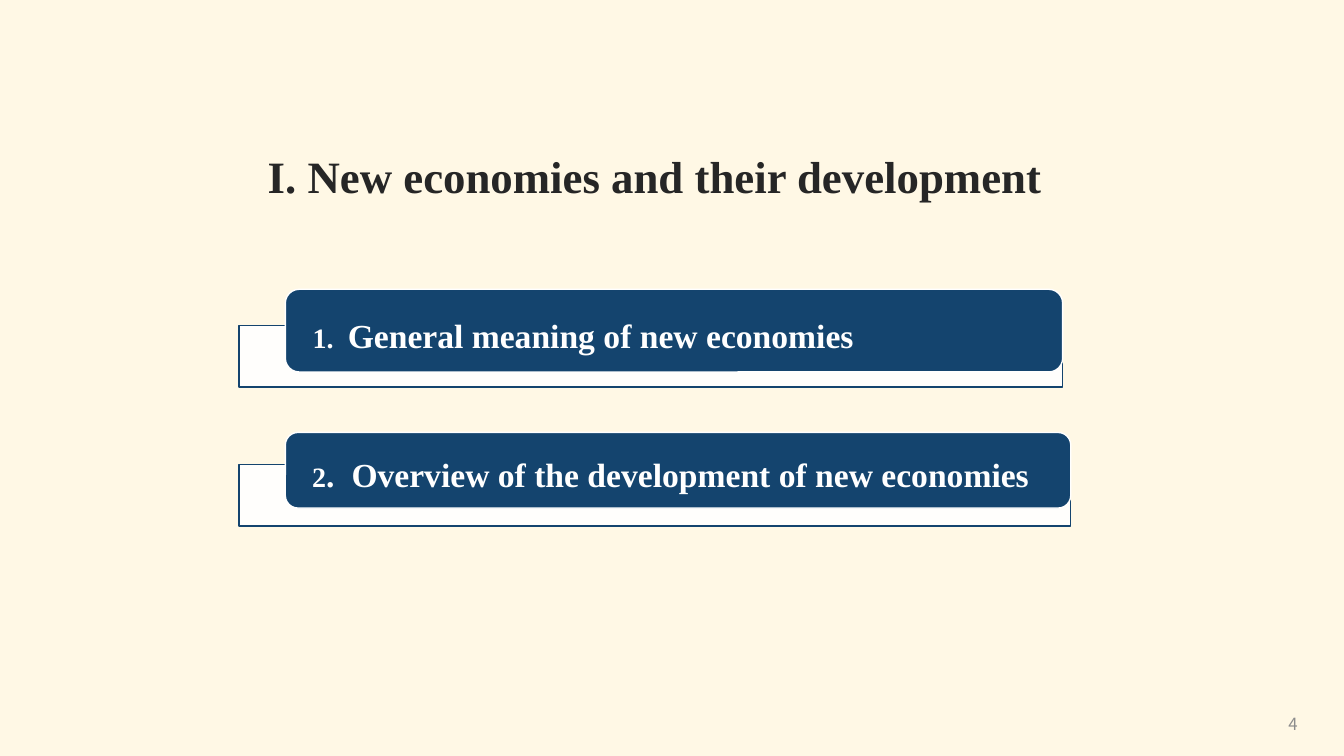
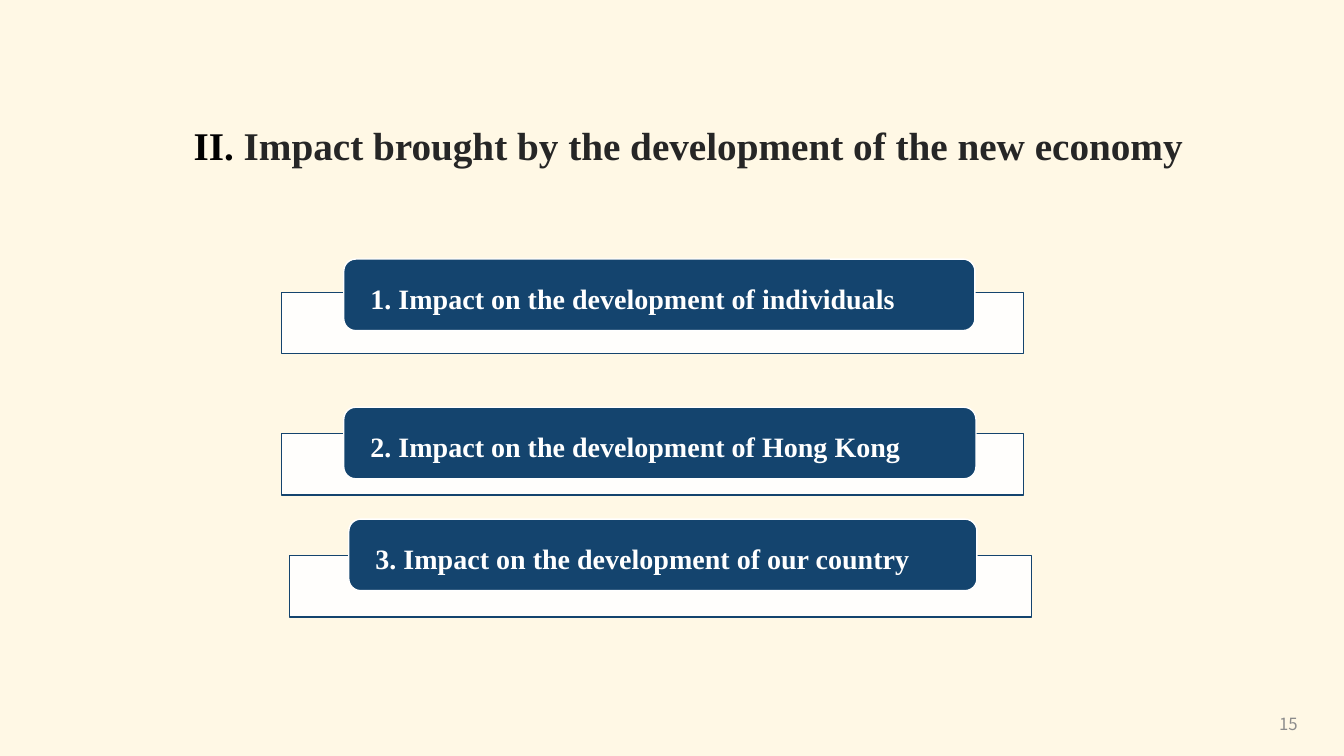
from dataclasses import dataclass

from lxml.etree import SubElement
from pptx import Presentation
from pptx.dml.color import RGBColor
from pptx.enum.shapes import MSO_SHAPE
from pptx.enum.text import MSO_ANCHOR, MSO_AUTO_SIZE, PP_ALIGN
from pptx.oxml.ns import qn
from pptx.util import Inches, Pt


@dataclass(frozen=True)
class Theme:
    cream: str = "FFF8E5"
    navy: str = "14446E"
    white: str = "FFFFFF"
    ink: str = "262626"
    black: str = "000000"
    gray: str = "8C8C8C"
    serif: str = "Times New Roman"
    sans: str = "Noto Sans CJK SC"
    opening_title: int = 32
    title: int = 28
    lead: int = 24
    item: int = 20
    number: int = 12
    outline: int = 1


THEME = Theme()
TRAY_HEIGHT = 0.61
PAGE_NUMBER_AREA = (9.97, 6.98, 3, 0.4)

SECTIONS = [
    {
        "page": "4",
        "title": [("I. New economies and their development", THEME.opening_title, THEME.ink)],
        "title_area": (2.34, 1.42, 8.31, 0.71),
        "topics": [
            {"runs": [("1.\t", THEME.item), ("General meaning of new economies", THEME.lead)],
             "hang": 0.35, "tray": (2.37, 3.23, 8.17), "label": (2.83, 2.87, 7.71, 0.82)},
            {"runs": [("2", THEME.item),
                      (".\tOverview of the development of new economies", THEME.lead)],
             "hang": 0.39, "tray": (2.37, 4.61, 8.25), "label": (2.83, 4.29, 7.79, 0.75)},
        ],
    },
    {
        "page": "15",
        "title": [("II. ", THEME.title, THEME.black),
                  ("Impact brought by the development of the new economy", THEME.title, THEME.ink)],
        "title_area": (1.68, 1.11, 10.29, 0.71),
        "topics": [
            {"runs": [("1. Impact on the development of individuals", THEME.item)],
             "tray": (2.79, 2.9, 7.36), "label": (3.41, 2.57, 6.26, 0.71)},
            {"runs": [("2. Impact on the development of Hong Kong", THEME.item)],
             "tray": (2.79, 4.3, 7.36), "label": (3.41, 4.04, 6.27, 0.71)},
            {"runs": [("3. Impact on the development of our country", THEME.item)],
             "tray": (2.87, 5.51, 7.36), "label": (3.46, 5.15, 6.23, 0.71)},
        ],
    },
]

FRAME_FORMAT = {"word_wrap": True, "auto_size": MSO_AUTO_SIZE.NONE,
                "vertical_anchor": MSO_ANCHOR.MIDDLE}
LABEL_INSETS = {"margin_left": Inches(0.23), "margin_right": Inches(0.23),
                "margin_top": 0, "margin_bottom": 0}
TITLE_PARAGRAPH = {"alignment": PP_ALIGN.CENTER, "line_spacing": 0.9}
LABEL_PARAGRAPH = {"alignment": PP_ALIGN.LEFT, "line_spacing": 1.2}
NUMBER_PARAGRAPH = {"alignment": PP_ALIGN.RIGHT}


def apply(target, values):
    for name, value in values.items():
        setattr(target, name, value)


def write(frame, runs, paragraph_format, font_name=THEME.serif, bold=True):
    apply(frame, FRAME_FORMAT)
    paragraph = frame.paragraphs[0]
    apply(paragraph, paragraph_format)
    for text, size, color in runs:
        run = paragraph.add_run()
        run.text = text
        apply(run.font, {"name": font_name, "size": Pt(size), "bold": bold})
        run.font.color.rgb = RGBColor.from_string(color)
    return paragraph


def add_panel(slide, kind, area, fill, line):
    panel = slide.shapes.add_shape(kind, *map(Inches, area))
    panel.shadow.inherit = False
    panel.fill.solid()
    panel.fill.fore_color.rgb = RGBColor.from_string(fill)
    panel.line.color.rgb = RGBColor.from_string(line)
    panel.line.width = Pt(THEME.outline)
    return panel


def add_topic(slide, topic):
    tray = add_panel(slide, MSO_SHAPE.RECTANGLE, (*topic["tray"], TRAY_HEIGHT),
                     THEME.white, THEME.navy)
    tray_color = tray.fill._xPr.find(qn("a:solidFill"))[0]
    SubElement(tray_color, qn("a:alpha"), val="90000")

    label = add_panel(slide, MSO_SHAPE.ROUNDED_RECTANGLE, topic["label"],
                      THEME.navy, THEME.white)
    apply(label.text_frame, LABEL_INSETS)
    runs = [(text, size, THEME.white) for text, size in topic["runs"]]
    paragraph = write(label.text_frame, runs, LABEL_PARAGRAPH)
    if "hang" in topic:
        hang = Inches(topic["hang"])
        properties = paragraph._p.get_or_add_pPr()
        properties.set("marL", str(hang))
        properties.set("indent", str(-hang))


def add_section(deck, section):
    slide = deck.slides.add_slide(deck.slide_layouts[5])
    title = slide.shapes.title
    apply(title, dict(zip(("left", "top", "width", "height"),
                          map(Inches, section["title_area"]))))
    write(title.text_frame, section["title"], TITLE_PARAGRAPH)
    for topic in section["topics"]:
        add_topic(slide, topic)
    page_number = slide.shapes.add_textbox(*map(Inches, PAGE_NUMBER_AREA))
    write(page_number.text_frame, [(section["page"], THEME.number, THEME.gray)],
          NUMBER_PARAGRAPH, THEME.sans, False)


def main():
    deck = Presentation()
    apply(deck, {"slide_width": Inches(13.33), "slide_height": Inches(7.5)})
    background = deck.slide_master.background.fill
    background.solid()
    background.fore_color.rgb = RGBColor.from_string(THEME.cream)
    for section in SECTIONS:
        add_section(deck, section)
    deck.save("out.pptx")


if __name__ == "__main__":
    main()
